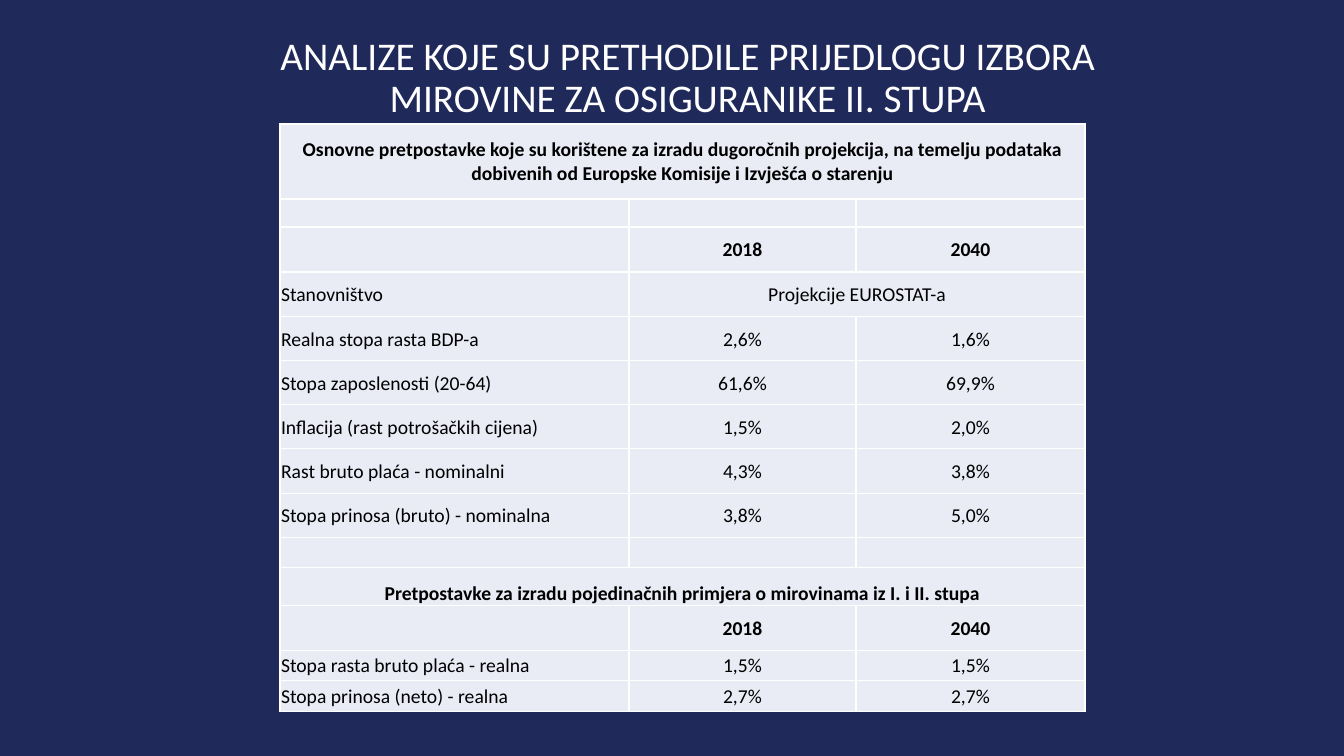
from dataclasses import dataclass

from pptx import Presentation
from pptx.dml.color import RGBColor
from pptx.enum.text import MSO_ANCHOR, PP_ALIGN
from pptx.oxml.xmlchemy import OxmlElement
from pptx.util import Pt


@dataclass(frozen=True)
class Theme:
    """Colours and type of the slide."""
    font: str = "Calibri"
    title_size: int = 28
    table_size: int = 14
    background: str = "1F295A"
    title: str = "FFFFFF"
    cell: str = "E9EBF5"
    text: str = "000000"
    border: str = "FFFFFF"


@dataclass(frozen=True)
class Row:
    """A table row; the last text spans the columns left over."""
    height: int
    texts: tuple
    bold: bool = False
    anchor: MSO_ANCHOR = MSO_ANCHOR.MIDDLE


THEME = Theme()
TITLE = "ANALIZE KOJE SU PRETHODILE PRIJEDLOGU IZBORA MIROVINE ZA OSIGURANIKE II. STUPA"
COLUMNS = (349, 227, 229)
BLANK = ("", "", "")
YEARS = Row(45, ("", "2018", "2040"), True)
ROWS = (
    Row(75, ("Osnovne pretpostavke koje su korištene za izradu dugoročnih projekcija, "
             "na temelju podataka dobivenih od Europske Komisije i Izvješća o starenju",), True),
    Row(28, BLANK),
    YEARS,
    Row(45, ("Stanovništvo", "Projekcije EUROSTAT-a")),
    Row(44, ("Realna stopa rasta BDP-a", "2,6%", "1,6%")),
    Row(44, ("Stopa zaposlenosti (20-64)", "61,6%", "69,9%")),
    Row(44, ("Inflacija (rast potrošačkih cijena)", "1,5%", "2,0%")),
    Row(45, ("Rast bruto plaća - nominalni", "4,3%", "3,8%")),
    Row(44, ("Stopa prinosa (bruto) - nominalna", "3,8%", "5,0%")),
    Row(30, BLANK),
    Row(38, ("Pretpostavke za izradu pojedinačnih primjera o mirovinama iz I. i II. stupa",),
        True, MSO_ANCHOR.BOTTOM),
    YEARS,
    Row(30, ("Stopa rasta bruto plaća - realna", "1,5%", "1,5%")),
    Row(31, ("Stopa prinosa (neto) - realna", "2,7%", "2,7%")),
)


def px(n):
    """Turn pixels into EMU."""
    return round(n * 914400 / 100.8)


def style(p, size, color, bold, align):
    """Set the font and alignment of a paragraph."""
    p.alignment = align
    p.font.name = THEME.font
    p.font.size = Pt(size)
    p.font.bold = bold
    p.font.color.rgb = RGBColor.from_string(color)


def add_borders(cell):
    """Draw a thin line on all four sides of a cell."""
    tcPr = cell._tc.get_or_add_tcPr()
    for side in "LRTB":
        ln = OxmlElement(f"a:ln{side}")
        ln.set("w", str(Pt(1)))
        fill = OxmlElement("a:solidFill")
        color = OxmlElement("a:srgbClr")
        color.set("val", THEME.border)
        fill.append(color)
        ln.append(fill)
        tcPr.append(ln)


def fill_cell(cell, text, row, align):
    """Write and format one table cell."""
    p = cell.text_frame.paragraphs[0]
    if text:
        p.add_run().text = text
        style(p, THEME.table_size, THEME.text, row.bold, align)
    else:
        end = OxmlElement("a:endParaRPr")
        end.set("sz", str(THEME.table_size * 100))
        p._p.append(end)
    cell.vertical_anchor = row.anchor
    cell.margin_left = cell.margin_right = cell.margin_top = px(1)
    cell.margin_bottom = 0


def add_title(s, x, y, w, h):
    """Place the centred slide title in its box."""
    tf = s.shapes.add_textbox(px(x), px(y), px(w), px(h)).text_frame
    tf.word_wrap = True
    tf.vertical_anchor = MSO_ANCHOR.MIDDLE
    p = tf.paragraphs[0]
    p.add_run().text = TITLE
    p.line_spacing = 0.9
    style(p, THEME.title_size, THEME.title, False, PP_ALIGN.CENTER)


def add_assumptions(s, x, y):
    """Place the table of assumptions with its top left corner at x, y."""
    width, height = sum(COLUMNS), sum(row.height for row in ROWS)
    table = s.shapes.add_table(len(ROWS), len(COLUMNS), px(x), px(y), px(width), px(height)).table
    table.first_row = table.horz_banding = False
    for column, w in zip(table.columns, COLUMNS):
        column.width = px(w)
    for i, row in enumerate(ROWS):
        table.rows[i].height = px(row.height)
        for cell in table.rows[i].cells:
            add_borders(cell)
            cell.fill.solid()
            cell.fill.fore_color.rgb = RGBColor.from_string(THEME.cell)
        last = len(row.texts) - 1
        if last < len(COLUMNS) - 1:
            table.cell(i, last).merge(table.cell(i, len(COLUMNS) - 1))
        for j, text in enumerate(row.texts):
            align = PP_ALIGN.LEFT if j == 0 and last > 0 else PP_ALIGN.CENTER
            fill_cell(table.cell(i, j), text, row, align)


def main():
    """Build and save the slide."""
    prs = Presentation()
    prs.slide_width, prs.slide_height = px(1344), px(756)
    s = prs.slides.add_slide(prs.slide_layouts[6])
    s.background.fill.solid()
    s.background.fill.fore_color.rgb = RGBColor.from_string(THEME.background)
    add_title(s, 240, 34, 895, 90)
    add_assumptions(s, 280, 124)
    prs.save("out.pptx")


if __name__ == "__main__":
    main()
